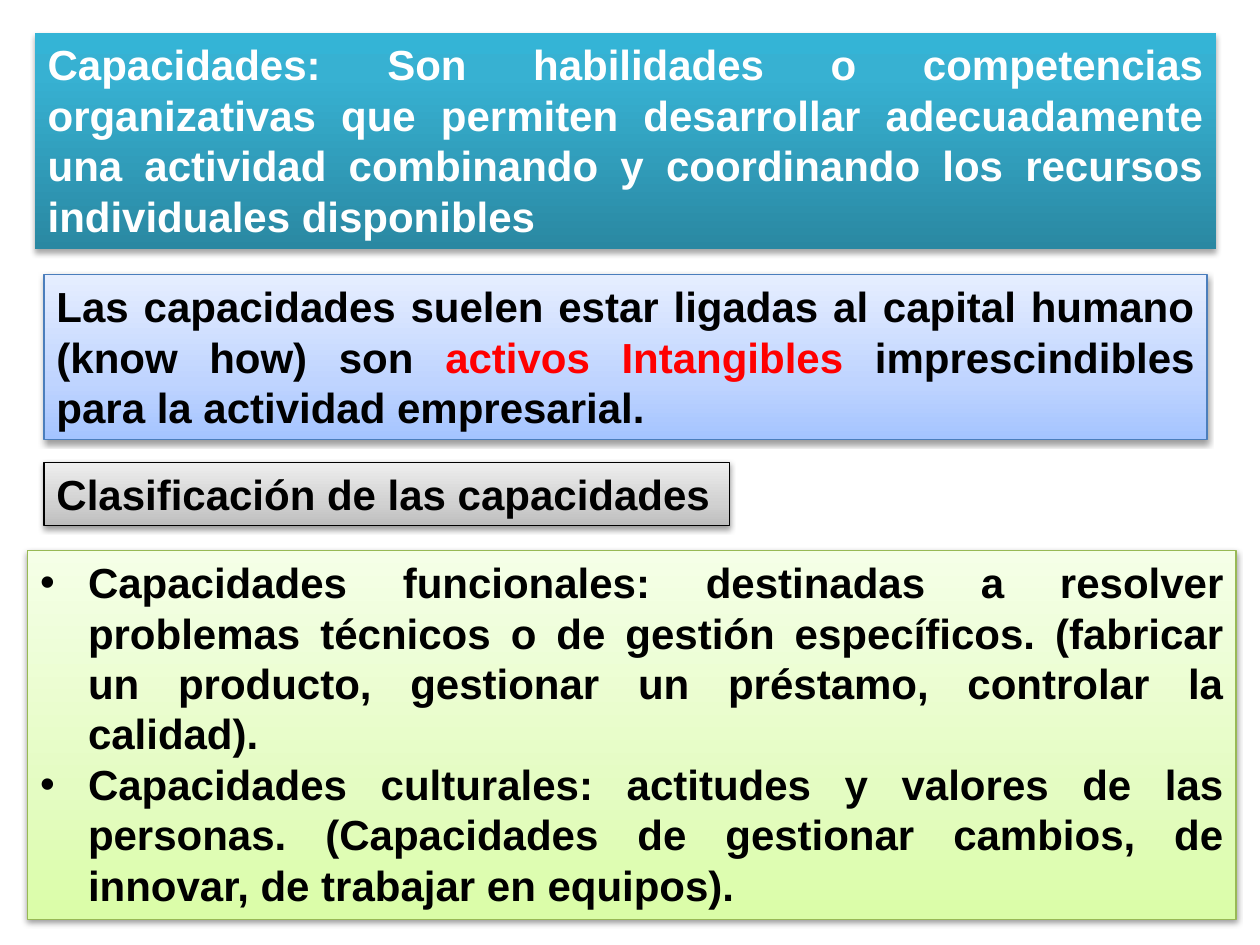
"""Build a slide that defines organisational capabilities and classifies them."""
from copy import deepcopy
from typing import NamedTuple

from lxml.etree import SubElement
from pptx import Presentation
from pptx.dml.color import RGBColor
from pptx.enum.text import MSO_AUTO_SIZE, PP_ALIGN
from pptx.oxml.ns import qn
from pptx.util import Pt

EMU_PER_PX = 9144
BLACK = RGBColor(0x00, 0x00, 0x00)
WHITE = RGBColor(0xFF, 0xFF, 0xFF)
RED = RGBColor(0xFF, 0x00, 0x00)
BLUE_EDGE = RGBColor(0x4B, 0x7E, 0xBC)
GREEN_EDGE = RGBColor(0x98, 0xB9, 0x55)
TEAL_SHADES = (RGBColor(0x2A, 0x88, 0xA2), RGBColor(0x37, 0xB1, 0xD2), RGBColor(0x34, 0xB4, 0xD6))
BLUE_SHADES = (RGBColor(0xA4, 0xC4, 0xFF), RGBColor(0xBF, 0xD4, 0xFF), RGBColor(0xE6, 0xEE, 0xFF))
GREEN_SHADES = (RGBColor(0xDA, 0xFD, 0xA7), RGBColor(0xE4, 0xFC, 0xC2), RGBColor(0xF5, 0xFF, 0xE7))
GREY_SHADES = (RGBColor(0xBD, 0xBD, 0xBD), RGBColor(0xD1, 0xD1, 0xD1), RGBColor(0xEE, 0xEE, 0xEE))
TEXT_FORMAT = {"name": "Arial", "size": Pt(24), "bold": True}


class Span(NamedTuple):
    text: str
    color: RGBColor = BLACK


class Panel(NamedTuple):
    left: int
    top: int
    width: int
    height: int
    shades: tuple[RGBColor, ...]
    paragraphs: list[list[Span]]
    edge: RGBColor | None = None
    middle: float = 0.35
    shadow_drop: int = 20000
    shadow_alpha: int = 38000
    wrap: bool = True
    bulleted: bool = False


PANELS = [
    Panel(28, 26, 937, 172, TEAL_SHADES, [[Span(
        "Capacidades: Son habilidades o competencias organizativas que permiten desarrollar "
        "adecuadamente una actividad combinando y coordinando los recursos individuales "
        "disponibles", WHITE)]], middle=0.8, shadow_drop=23000, shadow_alpha=35000),
    Panel(35, 218, 923, 131, BLUE_SHADES, [[
        Span("Las capacidades suelen estar ligadas al capital humano (know how) son "),
        Span("activos Intangibles ", RED),
        Span("imprescindibles para la actividad empresarial.")]], BLUE_EDGE),
    Panel(22, 437, 959, 293, GREEN_SHADES, [
        [Span("Capacidades funcionales: destinadas a resolver problemas técnicos o de gestión "
              "específicos. (fabricar un producto, gestionar un préstamo, controlar la calidad).")],
        [Span("Capacidades culturales: actitudes y valores de las personas. (Capacidades de "
              "gestionar cambios, de innovar, de trabajar en equipos).")]],
        GREEN_EDGE, bulleted=True),
    Panel(35, 367, 544, 50, GREY_SHADES, [[Span("Clasificación de las capacidades")]],
          BLACK, wrap=False),
]


def px(length: int) -> int:
    """Turn px into EMU."""
    return length * EMU_PER_PX


def fill_gradient(box, panel: Panel) -> None:
    """Fill the box with three shades rising from the bottom edge."""
    box.fill.gradient()
    box.fill.gradient_angle = 90
    stop_list = box._element.spPr.find(".//" + qn("a:gsLst"))
    stop_list.append(deepcopy(stop_list[0]))
    for stop, position, shade in zip(box.fill.gradient_stops, (0, panel.middle, 1), panel.shades):
        stop.position = position
        stop.color.rgb = shade


def add_shadow(box, panel: Panel) -> None:
    """Drop a soft black shadow below the box."""
    effects = SubElement(box._element.spPr, qn("a:effectLst"))
    shadow = SubElement(effects, qn("a:outerShdw"), blurRad="40000",
                        dist=str(panel.shadow_drop), dir="5400000", rotWithShape="0")
    color = SubElement(shadow, qn("a:srgbClr"), val=str(BLACK))
    SubElement(color, qn("a:alpha"), val=str(panel.shadow_alpha))


def add_bullet(paragraph) -> None:
    """Give the paragraph a hanging round bullet."""
    properties = paragraph._p.get_or_add_pPr()
    properties.set("marL", str(px(38)))
    properties.set("indent", str(px(-38)))
    SubElement(properties, qn("a:buFont"), typeface="Arial")
    SubElement(properties, qn("a:buChar"), char="•")


def write_text(box, panel: Panel) -> None:
    """Write the justified paragraphs of the panel."""
    frame = box.text_frame
    frame.word_wrap = panel.wrap
    frame.auto_size = MSO_AUTO_SIZE.SHAPE_TO_FIT_TEXT
    for index, spans in enumerate(panel.paragraphs):
        paragraph = frame.add_paragraph() if index else frame.paragraphs[0]
        paragraph.alignment = PP_ALIGN.JUSTIFY
        if panel.bulleted:
            add_bullet(paragraph)
        for span in spans:
            run = paragraph.add_run()
            run.text = span.text
            run.font.color.rgb = span.color
            for name, value in TEXT_FORMAT.items():
                setattr(run.font, name, value)


def draw_panel(page, panel: Panel) -> None:
    """Draw one panel with its fill, edge, shadow and text."""
    box = page.shapes.add_textbox(*map(px, panel[:4]))
    fill_gradient(box, panel)
    if panel.edge is not None:
        box.line.color.rgb = panel.edge
        box.line.width = Pt(0.75)
    add_shadow(box, panel)
    write_text(box, panel)


def main() -> None:
    """Build and save the deck."""
    deck = Presentation()
    deck.slide_width, deck.slide_height = px(1000), px(750)
    page = deck.slides.add_slide(deck.slide_layouts[6])
    for panel in PANELS:
        draw_panel(page, panel)
    deck.save("out.pptx")


if __name__ == "__main__":
    main()
